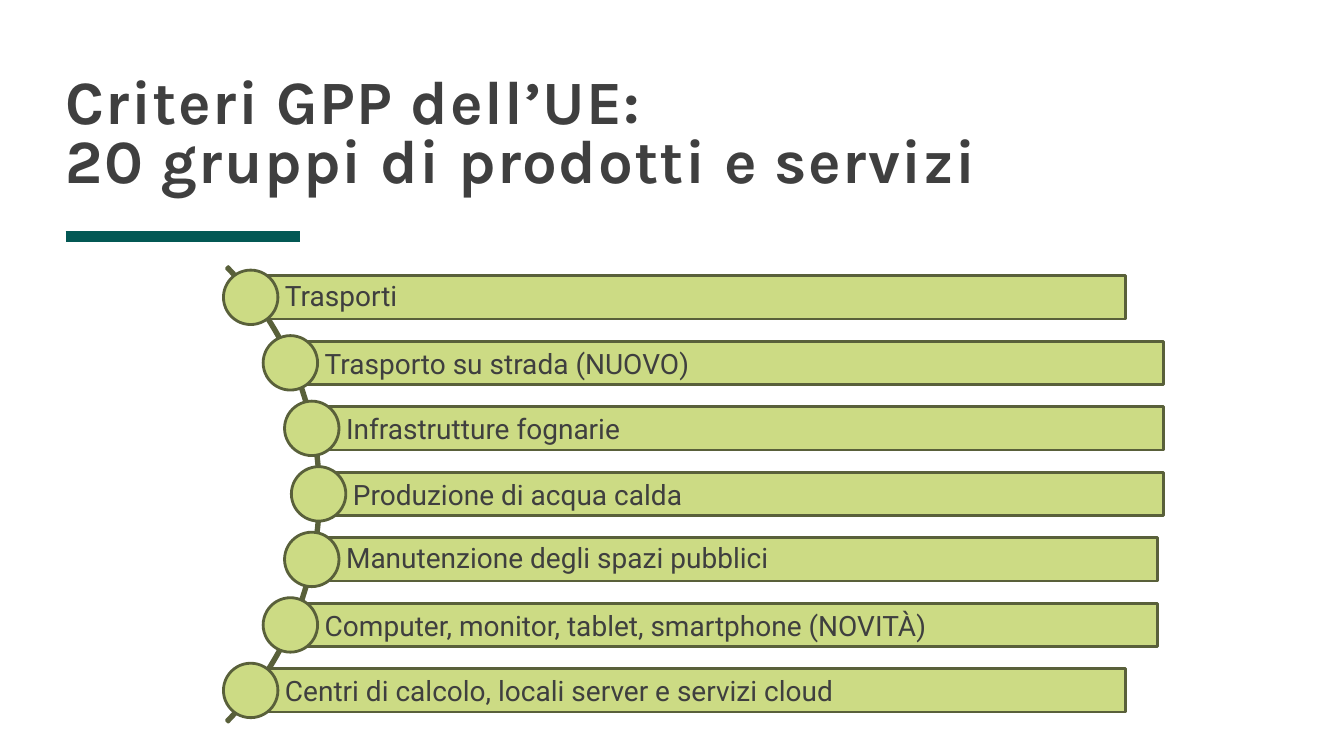
from dataclasses import dataclass
from math import sqrt

from lxml.etree import SubElement
from pptx import Presentation
from pptx.dml.color import RGBColor
from pptx.enum.shapes import MSO_CONNECTOR, MSO_SHAPE
from pptx.enum.text import MSO_ANCHOR, PP_ALIGN
from pptx.oxml.ns import qn
from pptx.shapes.autoshape import Shape
from pptx.slide import Slide
from pptx.util import Inches, Pt

LIME = RGBColor(0xCC, 0xDB, 0x84)
OLIVE = RGBColor(0x59, 0x60, 0x3A)
TEAL = RGBColor(0x03, 0x58, 0x54)
CHARCOAL = RGBColor(0x3F, 0x3F, 0x3F)

ARC_RADIUS = 3.16
ARC_MIDDLE = 4.9
ROW_PITCH = 0.65
BAR_HEIGHT = 0.43
CIRCLE_SIZE = 0.54


@dataclass(frozen=True)
class Group:
    label: str
    bar_right: float
    line_spacing: float = 1.0


GROUPS = [
    Group("Trasporti", 11.16, 0.9),
    Group("Trasporto su strada (NUOVO)", 11.54),
    Group("Infrastrutture fognarie", 11.54),
    Group("Produzione di acqua calda", 11.54),
    Group("Manutenzione degli spazi pubblici", 11.48, 0.9),
    Group("Computer, monitor, tablet, smartphone (NOVITÀ)", 11.48),
    Group("Centri di calcolo, locali server e servizi cloud", 11.16),
]


def add_lime_shape(slide: Slide, kind: MSO_SHAPE, left: float, top: float,
                   width: float, height: float) -> Shape:
    shape = slide.shapes.add_shape(
        kind, Inches(left), Inches(top), Inches(width), Inches(height))
    shape.shadow.inherit = False
    shape.fill.solid()
    shape.fill.fore_color.rgb = LIME
    shape.line.color.rgb = OLIVE
    shape.line.width = Pt(2)
    return shape


def add_title(slide: Slide) -> None:
    box = slide.shapes.add_textbox(Inches(0.65), Inches(0.22), Inches(12), Inches(1.72))
    frame = box.text_frame
    frame.word_wrap = True
    frame.vertical_anchor = MSO_ANCHOR.BOTTOM
    frame.margin_left = frame.margin_right = frame.margin_top = frame.margin_bottom = 0
    paragraph = frame.paragraphs[0]
    paragraph.text = "Criteri GPP dell’UE:\v20 gruppi di prodotti e servizi"
    paragraph.line_spacing = 0.8
    font = paragraph.font
    font.name, font.size, font.bold = "Karla", Pt(44), True
    font.color.rgb = CHARCOAL
    for run in paragraph.runs:
        run.font._element.set("spc", "100")


def add_title_rule(slide: Slide) -> None:
    rule = slide.shapes.add_connector(
        MSO_CONNECTOR.STRAIGHT, Inches(0.65), Inches(2.35), Inches(2.98), Inches(2.35))
    rule.line.color.rgb = TEAL
    rule.line.width = Pt(8)
    SubElement(rule._element.spPr, qn("a:effectLst"))


def add_arc(slide: Slide) -> None:
    arc = add_lime_shape(slide, MSO_SHAPE.BLOCK_ARC, -3.17, 1.69, 6.35, 6.43)
    for index, value in enumerate((189, 27, 0.004)):
        arc.adjustments[index] = value


def add_group(slide: Slide, group: Group, offset: float) -> None:
    """Draw a bar whose circle is centred on the arc, offset from its middle."""
    center_x = sqrt(ARC_RADIUS ** 2 - offset ** 2)
    center_y = ARC_MIDDLE + offset
    bar = add_lime_shape(slide, MSO_SHAPE.RECTANGLE, center_x, center_y - BAR_HEIGHT / 2,
                         group.bar_right - center_x, BAR_HEIGHT)
    frame = bar.text_frame
    frame.word_wrap = True
    frame.vertical_anchor = MSO_ANCHOR.MIDDLE
    frame.margin_left = Inches(0.34)
    frame.margin_right = frame.margin_top = frame.margin_bottom = Inches(0.06)
    paragraph = frame.paragraphs[0]
    paragraph.text = group.label
    paragraph.alignment = PP_ALIGN.LEFT
    paragraph.line_spacing = group.line_spacing
    font = paragraph.font
    font.name, font.size = "Roboto", Pt(20)
    font.color.rgb = CHARCOAL
    add_lime_shape(slide, MSO_SHAPE.OVAL, center_x - CIRCLE_SIZE / 2,
                   center_y - CIRCLE_SIZE / 2, CIRCLE_SIZE, CIRCLE_SIZE)


def main() -> None:
    presentation = Presentation()
    presentation.slide_width = Inches(13.33)
    presentation.slide_height = Inches(7.5)
    slide = presentation.slides.add_slide(presentation.slide_layouts[6])
    add_title_rule(slide)
    add_title(slide)
    add_arc(slide)
    middle_row = (len(GROUPS) - 1) / 2
    for row, group in enumerate(GROUPS):
        add_group(slide, group, (row - middle_row) * ROW_PITCH)
    presentation.save("out.pptx")


if __name__ == "__main__":
    main()
